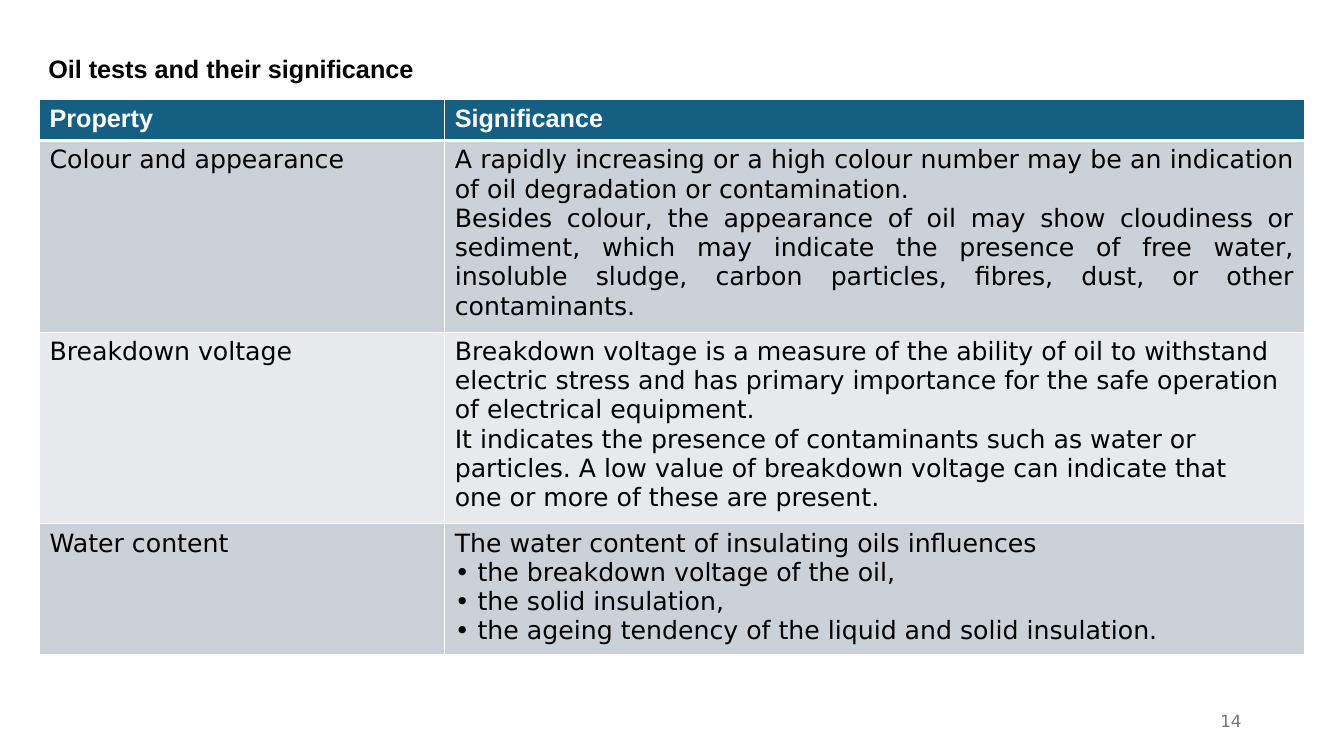
from dataclasses import dataclass

from lxml import etree
from pptx import Presentation
from pptx.dml.color import RGBColor
from pptx.enum.text import MSO_ANCHOR, PP_ALIGN
from pptx.oxml.ns import qn
from pptx.util import Pt

LEFT, RIGHT, JUSTIFY = PP_ALIGN.LEFT, PP_ALIGN.RIGHT, PP_ALIGN.JUSTIFY
TOP, MIDDLE = MSO_ANCHOR.TOP, MSO_ANCHOR.MIDDLE

HEADINGS = ["Property", "Significance"]
OIL_TESTS = [
    ("Colour and appearance", [
        "A rapidly increasing or a high colour number may be an indication of oil "
        "degradation or contamination.",
        "Besides colour, the appearance of oil may show cloudiness or sediment, which may "
        "indicate the presence of free water, insoluble sludge, carbon particles, fibres, "
        "dust, or other contaminants.",
    ], [], JUSTIFY),
    ("Breakdown voltage", [
        "Breakdown voltage is a measure of the ability of oil to withstand electric stress "
        "and has primary importance for the safe operation of electrical equipment.",
        "It indicates the presence of contaminants such as water or particles. A low value "
        "of breakdown voltage can indicate that",
        "one or more of these are present.",
    ], [], LEFT),
    ("Water content", ["The water content of insulating oils influences"], [
        "the breakdown voltage of the oil,",
        "the solid insulation,",
        "the ageing tendency of the liquid and solid insulation.",
    ], LEFT),
]
COLUMN_WIDTHS = [289.5, 614]
ROW_HEIGHTS = [29.2, 136.8, 136.8, 93.6]


@dataclass(frozen=True)
class Theme:
    """Colours, fonts and sizes of the slide."""
    ink: str = "000000"
    paper: str = "FFFFFF"
    muted: str = "757575"
    header: str = "156082"
    bands: tuple = ("CAD1D8", "E7E9EC")
    heading_font: str = "Arial"
    body_font: str = "DejaVu Sans"
    text_size: float = 18
    number_size: float = 12
    bullet_indent: float = 16.3
    thin: float = 1
    thick: float = 3


def write(tf, paragraphs, *, font, size, color, bold=False, align=LEFT, bullets=(), indent=0):
    """Fill a text frame with plain paragraphs followed by bulleted ones."""
    items = [(text, False) for text in paragraphs] + [(text, True) for text in bullets]
    for i, (text, bulleted) in enumerate(items):
        p = tf.add_paragraph() if i else tf.paragraphs[0]
        p.alignment = align
        if bulleted:
            pPr = p._p.get_or_add_pPr()
            pPr.set("marL", str(Pt(indent)))
            pPr.set("indent", str(-Pt(indent)))
            etree.SubElement(pPr, qn("a:buFont"), typeface=font)
            etree.SubElement(pPr, qn("a:buChar"), char="•")
        r = p.add_run()
        r.text = text
        r.font.name, r.font.size, r.font.bold = font, Pt(size), bold
        r.font.color.rgb = RGBColor.from_string(color)


class SlideBuilder:
    """Draws styled elements on one slide."""

    def __init__(self, s, theme):
        """Keep the slide and its theme."""
        self.s, self.theme = s, theme

    def text(self, content, x, y, w, h, anchor=TOP, **style):
        """Add a wrapping text box."""
        tf = self.s.shapes.add_textbox(Pt(x), Pt(y), Pt(w), Pt(h)).text_frame
        tf.word_wrap = True
        tf.vertical_anchor = anchor
        write(tf, [content], **style)

    def cell(self, cell, fill, top, bottom, paragraphs, **style):
        """Fill, border and write one table cell."""
        cell.fill.solid()
        cell.fill.fore_color.rgb = RGBColor.from_string(fill)
        tcPr = cell._tc.get_or_add_tcPr()
        widths = {"L": self.theme.thin, "R": self.theme.thin, "T": top, "B": bottom}
        for i, (side, width) in enumerate(widths.items()):
            ln = etree.Element(qn(f"a:ln{side}"), w=str(Pt(width)))
            solid = etree.SubElement(ln, qn("a:solidFill"))
            etree.SubElement(solid, qn("a:srgbClr"), val=self.theme.paper)
            tcPr.insert(i, ln)
        write(cell.text_frame, paragraphs, size=self.theme.text_size, **style)

    def table(self, headings, rows, x, y, widths, heights):
        """Add a table with a header row and banded body rows."""
        t = self.theme
        table = self.s.shapes.add_table(len(heights), len(widths), Pt(x), Pt(y),
                                        Pt(sum(widths)), Pt(sum(heights))).table
        for column, width in zip(table.columns, widths):
            column.width = Pt(width)
        for row, height in zip(table.rows, heights):
            row.height = Pt(height)
        for c, heading in enumerate(headings):
            self.cell(table.cell(0, c), t.header, t.thin, t.thick, [heading],
                      font=t.heading_font, color=t.paper, bold=True)
        body = dict(font=t.body_font, color=t.ink)
        for i, (name, paragraphs, bullets, align) in enumerate(rows):
            edges = (t.bands[i % 2], t.thin if i else t.thick, t.thin)
            self.cell(table.cell(i + 1, 0), *edges, [name], **body)
            self.cell(table.cell(i + 1, 1), *edges, paragraphs, bullets=bullets,
                      align=align, indent=t.bullet_indent, **body)


def main():
    """Build and save the slide."""
    prs = Presentation()
    prs.slide_width, prs.slide_height = Pt(960), Pt(540)
    theme = Theme()
    slide = SlideBuilder(prs.slides.add_slide(prs.slide_layouts[6]), theme)
    slide.text("14", 678, 500.5, 216, 28.8, anchor=MIDDLE, align=RIGHT,
               font=theme.body_font, size=theme.number_size, color=theme.muted)
    slide.text("Oil tests and their significance", 27.4, 34.6, 883.4, 29,
               font=theme.heading_font, size=theme.text_size, color=theme.ink, bold=True)
    slide.table(HEADINGS, OIL_TESTS, 28.2, 71.2, COLUMN_WIDTHS, ROW_HEIGHTS)
    prs.save("out.pptx")


if __name__ == "__main__":
    main()
